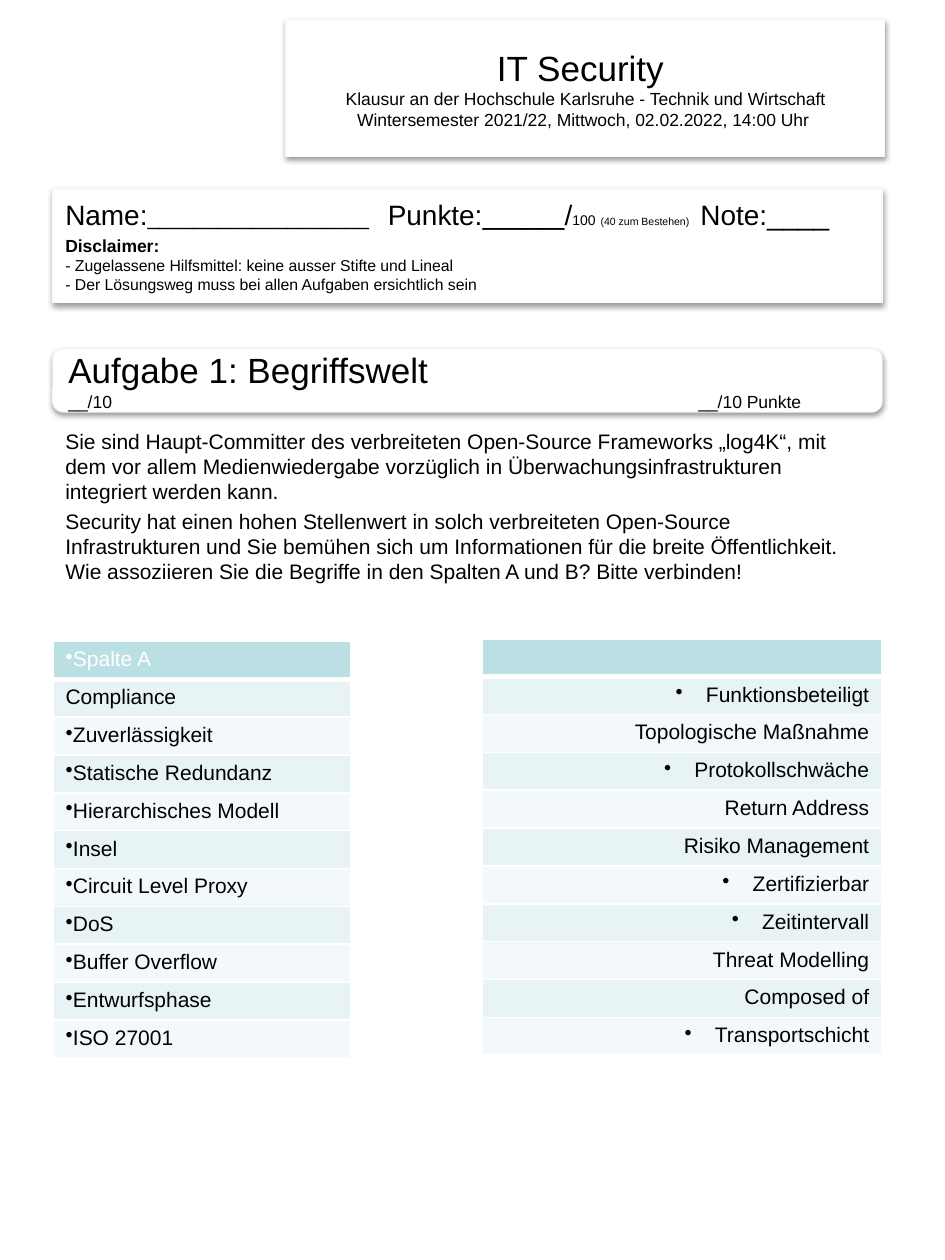
from dataclasses import dataclass

from lxml import etree
from pptx import Presentation
from pptx.dml.color import RGBColor
from pptx.enum import shapes, text
from pptx.oxml import ns
from pptx.util import Inches, Pt


@dataclass(frozen=True)
class Theme:
    font: str = "Arial"
    ink: str = "000000"
    white: str = "FFFFFF"
    outline: str = "F9F9F9"
    header: str = "BBE0E3"
    bands: tuple = ("E7F3F4", "F3F9FA")
    title: int = 20
    label: int = 16
    blank: int = 14
    body: int = 12
    small: int = 10
    note: int = 9
    total: int = 8
    tiny: int = 6


THEME = Theme()

TITLE = [[
    ("IT Security \n", {"size": THEME.title}),
    ("Klausur an der Hochschule Karlsruhe - Technik und Wirtschaft "
     "Wintersemester 2021/22, Mittwoch, 02.02.2022, 14:00 Uhr ", {"size": THEME.small}),
]]
CANDIDATE = [
    [
        ("Name:", {"size": THEME.label}),
        ("___________________\t", {"size": THEME.body}),
        ("Punkte:", {"size": THEME.label}),
        ("______", {"size": THEME.blank, "underline": True}),
        ("/", {"size": THEME.label}),
        ("100", {"size": THEME.total}),
        (" ", {"size": THEME.small}),
        ("(40 zum Bestehen)\t", {"size": THEME.tiny}),
        ("Note:____", {"size": THEME.label}),
    ],
    [
        ("Disclaimer:\n", {"size": THEME.small, "bold": True}),
        ("- Zugelassene Hilfsmittel: keine ausser Stifte und Lineal\n"
         "- Der Lösungsweg muss bei allen Aufgaben ersichtlich sein", {"size": THEME.note}),
    ],
]
TASK = [
    [("Aufgabe 1: Begriffswelt", {"size": THEME.title})],
    [("__/10\t__/10 Punkte", {"size": THEME.small})],
]
INSTRUCTIONS = [
    [("Sie sind Haupt-Committer des verbreiteten Open-Source Frameworks „log4K“, mit dem vor allem "
      "Medienwiedergabe vorzüglich in Überwachungsinfrastrukturen integriert werden kann.", {})],
    [("Security hat einen hohen Stellenwert in solch verbreiteten Open-Source Infrastrukturen und Sie "
      "bemühen sich um Informationen für die breite Öffentlichkeit. Wie assoziieren Sie die Begriffe "
      "in den Spalten A und B? Bitte verbinden!", {})],
]
COLUMN_A = ["Spalte A", "Compliance", "Zuverlässigkeit", "Statische Redundanz", "Hierarchisches Modell",
            "Insel", "Circuit Level Proxy", "DoS", "Buffer Overflow", "Entwurfsphase", "ISO 27001"]
COLUMN_B = ["", "Funktionsbeteiligt", "Topologische Maßnahme", "Protokollschwäche", "Return Address",
            "Risiko Management", "Zertifizierbar", "Zeitintervall", "Threat Modelling", "Composed of",
            "Transportschicht"]
UNBULLETED = {"", "Compliance", "Topologische Maßnahme", "Return Address", "Risiko Management",
              "Threat Modelling", "Composed of"}

LEFT, WIDTH = 0.42, 6.58
ROW_HEIGHT = 0.3
HANGING = 0.24


def add_element(parent, tag, **attributes):
    return etree.SubElement(parent, ns.qn(tag), **attributes)


def write_text(paragraph, content, size=THEME.body, color=THEME.ink, bold=False, underline=False):
    for index, line in enumerate(content.split("\n")):
        if index:
            paragraph.add_line_break()
        if line:
            run = paragraph.add_run()
            run.text = line
            run.font.name = THEME.font
            run.font.size = Pt(size)
            run.font.bold = bold
            run.font.underline = underline
            run.font.color.rgb = RGBColor.from_string(color)


def fill_frame(frame, paragraphs, align=text.PP_ALIGN.LEFT, anchor=text.MSO_ANCHOR.TOP, gap=0, tabs=()):
    frame.word_wrap = True
    frame.vertical_anchor = anchor
    for index, runs in enumerate(paragraphs):
        paragraph = frame.add_paragraph() if index else frame.paragraphs[0]
        if tabs:
            stops = add_element(paragraph._p.get_or_add_pPr(), "a:tabLst")
            for position in tabs:
                add_element(stops, "a:tab", pos=str(Inches(position)), algn="l")
        paragraph.alignment = align
        if index:
            paragraph.space_before = Pt(gap)
        for content, style in runs:
            write_text(paragraph, content, **style)


def add_card(slide, kind, left, top, width, height):
    shape = slide.shapes.add_shape(kind, Inches(left), Inches(top), Inches(width), Inches(height))
    shape.fill.solid()
    shape.fill.fore_color.rgb = RGBColor.from_string(THEME.white)
    shape.line.color.rgb = RGBColor.from_string(THEME.outline)
    shape.line.width = Pt(0.75)
    shape.shadow.inherit = False
    effects = shape._element.spPr.find(ns.qn("a:effectLst"))
    shadow = add_element(effects, "a:outerShdw", blurRad=str(Pt(3.1)), dist=str(Pt(1.6)),
                         dir="5400000", rotWithShape="0")
    add_element(add_element(shadow, "a:srgbClr", val=THEME.ink), "a:alpha", val="38000")
    return shape.text_frame


def set_borders(cell, widths):
    properties = cell._tc.get_or_add_tcPr()
    for index, (side, width) in enumerate(widths.items()):
        line = add_element(properties, f"a:ln{side}", w=str(Pt(width)))
        add_element(add_element(line, "a:solidFill"), "a:srgbClr", val=THEME.white)
        properties.insert(index, line)


def add_terms(slide, terms, left, top, width, align, hanging=0):
    table = slide.shapes.add_table(len(terms), 1, Inches(left), Inches(top), Inches(width),
                                   Inches(ROW_HEIGHT * len(terms))).table
    table.first_row = table.horz_banding = False
    for index, term in enumerate(terms):
        table.rows[index].height = Inches(ROW_HEIGHT)
        cell = table.cell(index, 0)
        cell.fill.solid()
        cell.fill.fore_color.rgb = RGBColor.from_string(THEME.bands[(index - 1) % 2] if index else THEME.header)
        set_borders(cell, {"L": 1, "R": 1, "T": 3 if index == 1 else 1, "B": 1 if index else 3})
        paragraph = cell.text_frame.paragraphs[0]
        if term not in UNBULLETED:
            properties = paragraph._p.get_or_add_pPr()
            properties.set("marL", str(Inches(hanging)))
            properties.set("indent", str(-Inches(hanging)))
            add_element(properties, "a:buChar", char="•")
        paragraph.alignment = align
        write_text(paragraph, term, color=THEME.ink if index else THEME.white)
        if not term:
            add_element(paragraph._p, "a:endParaRPr", sz=str(THEME.body * 100))


def main():
    presentation = Presentation()
    presentation.slide_width, presentation.slide_height = Inches(7.5), Inches(10)
    slide = presentation.slides.add_slide(presentation.slide_layouts[6])
    kinds, aligns, middle = shapes.MSO_SHAPE, text.PP_ALIGN, text.MSO_ANCHOR.MIDDLE

    fill_frame(add_card(slide, kinds.RECTANGLE, 2.27, 0.16, 4.75, 1.08), TITLE,
               align=aligns.CENTER, anchor=middle)
    candidate = add_card(slide, kinds.RECTANGLE, LEFT, 1.5, WIDTH, 0.9)
    candidate.margin_top = Inches(0.07)
    fill_frame(candidate, CANDIDATE, gap=2, tabs=(2.56, 5.04))
    fill_frame(add_card(slide, kinds.ROUNDED_RECTANGLE, LEFT, 2.77, WIDTH, 0.5), TASK,
               anchor=middle, tabs=(5,))
    instructions = slide.shapes.add_textbox(Inches(LEFT), Inches(3.35), Inches(WIDTH), Inches(1.35))
    fill_frame(instructions.text_frame, INSTRUCTIONS, gap=2.4)

    add_terms(slide, COLUMN_A, LEFT, 5.09, 2.36, aligns.LEFT)
    add_terms(slide, COLUMN_B, 3.83, 5.07, 3.17, aligns.RIGHT, hanging=HANGING)
    presentation.save("out.pptx")


if __name__ == "__main__":
    main()
